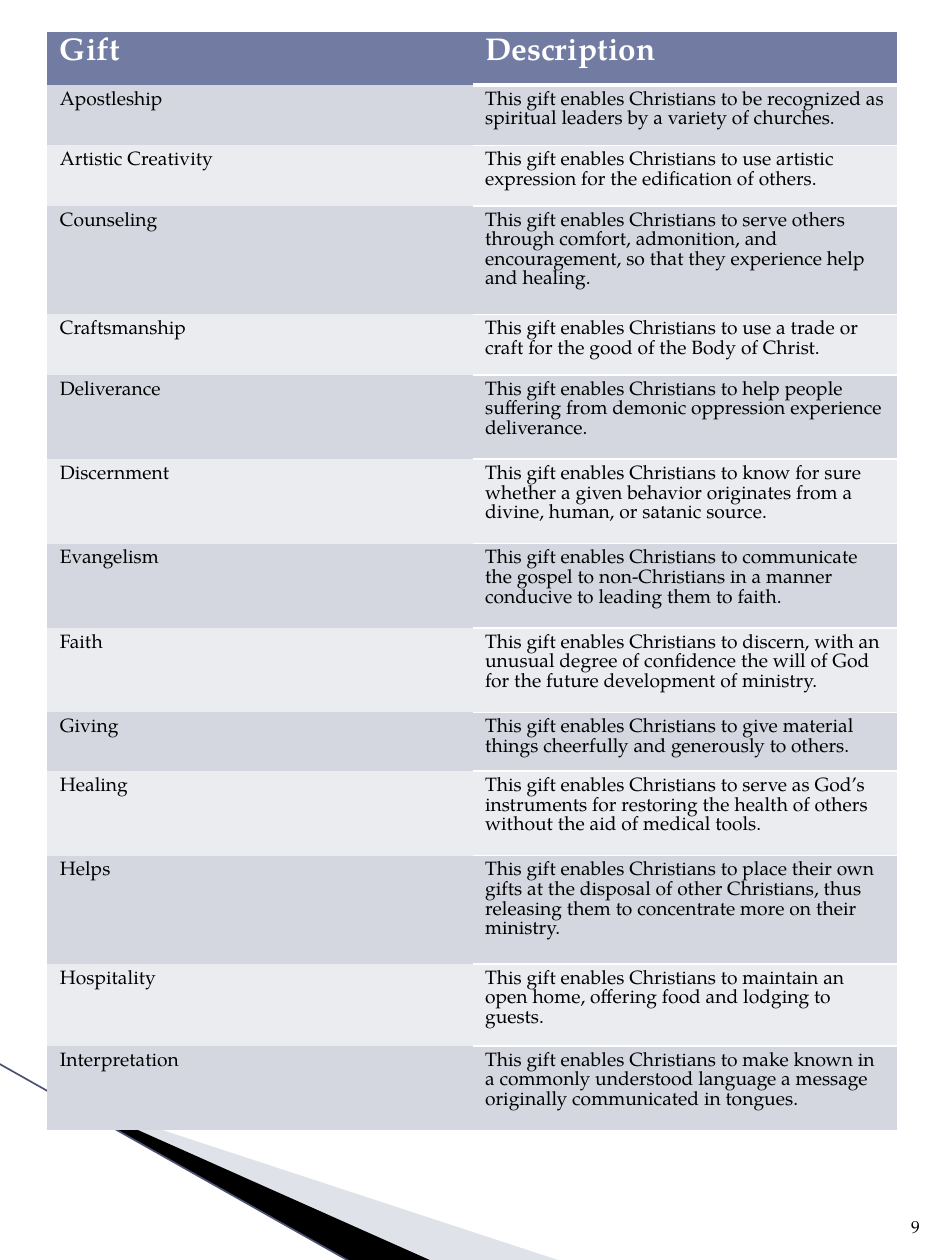
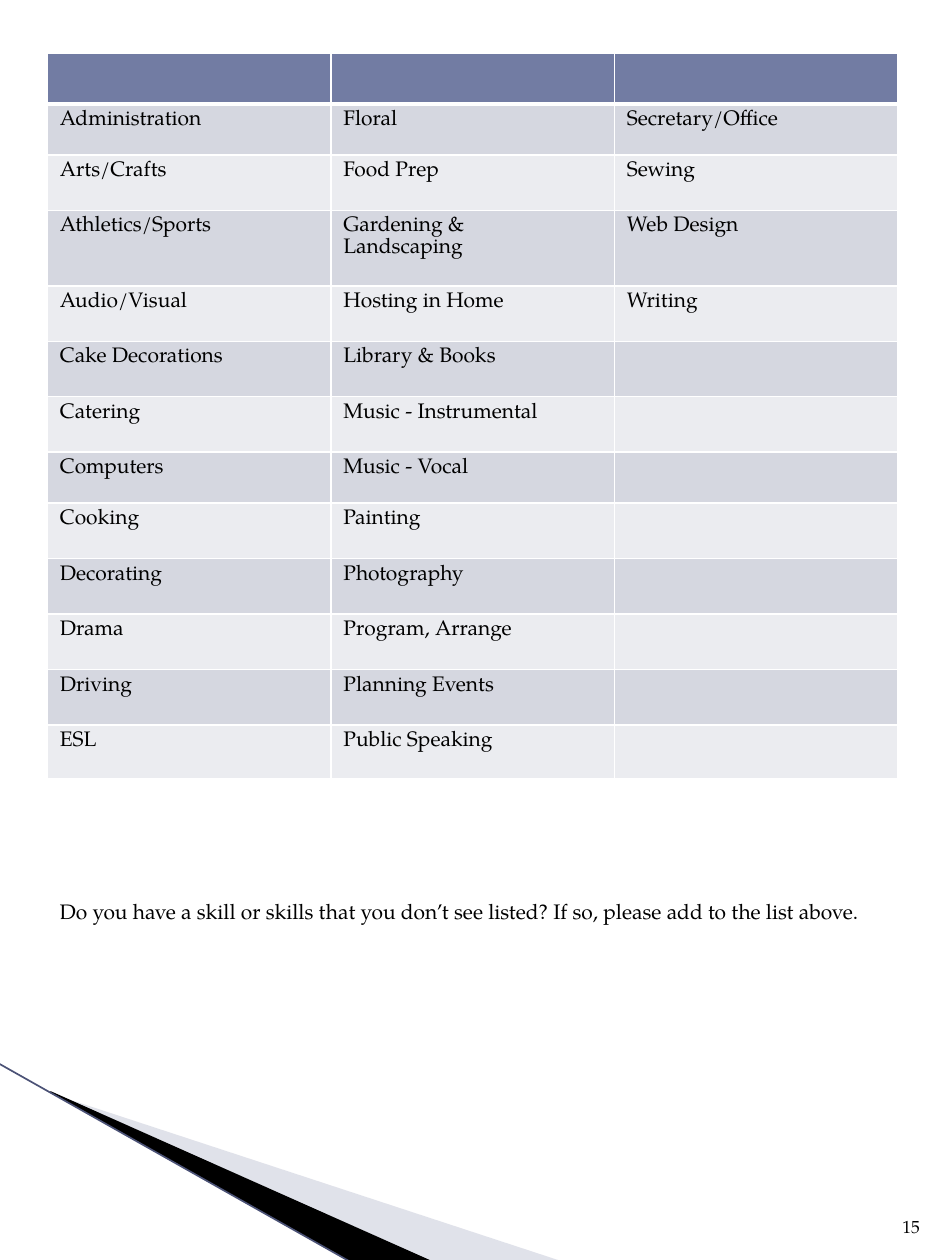
from lxml import etree
from pptx import Presentation
from pptx.dml.color import RGBColor
from pptx.enum.shapes import MSO_CONNECTOR
from pptx.enum.text import MSO_ANCHOR, PP_ALIGN
from pptx.oxml.ns import qn
from pptx.util import Inches, Pt

STRAIGHT = MSO_CONNECTOR.STRAIGHT
BOTTOM = MSO_ANCHOR.BOTTOM
LEFT, RIGHT = PP_ALIGN.LEFT, PP_ALIGN.RIGHT

WHITE = RGBColor(0xFF, 0xFF, 0xFF)
BLACK = RGBColor(0x00, 0x00, 0x00)
HEADER_BLUE = RGBColor(0x72, 0x7C, 0xA3)
BAND_DARK = RGBColor(0xD5, 0xD7, 0xE0)
BAND_LIGHT = RGBColor(0xEB, 0xEC, 0xF0)
WEDGE_BLUE = RGBColor(0xB3, 0xB7, 0xCB)
EDGE_BLUE = RGBColor(0x4B, 0x52, 0x76)

FONT_NAME = "TeX Gyre Pagella"
NO_TABLE_STYLE = "{2D5ABB26-0587-4C30-8999-92F81FD0307C}"
GRID_COLUMNS, GRID_ROWS = 20, 40

HEADER_FORMAT = {"size": Pt(18), "bold": True}
GIFT_FORMAT = {"size": Pt(11), "bold": False}
SKILL_FORMAT = {"size": Pt(12), "bold": False}
NUMBER_FORMAT = {"size": Pt(10)}

GIFT_HEADER = ("Gift", "Description")
GIFTS = [
    ("Apostleship", "be recognized as spiritual leaders by a variety of churches."),
    ("Artistic Creativity", "use artistic expression for the edification of others."),
    ("Counseling", "serve others through comfort, admonition, and encouragement, "
                   "so that they experience help and healing."),
    ("Craftsmanship", "use a trade or craft for the good of the Body of Christ."),
    ("Deliverance", "help people suffering from demonic oppression experience deliverance."),
    ("Discernment", "know for sure whether a given behavior originates from a divine, "
                    "human, or satanic source."),
    ("Evangelism", "communicate the gospel to non-Christians in a manner conducive to "
                   "leading them to faith."),
    ("Faith", "discern, with an unusual degree of confidence the will of God for the "
              "future development of ministry."),
    ("Giving", "give material things cheerfully and generously to others."),
    ("Healing", "serve as God’s instruments for restoring the health of others without "
                "the aid of medical tools."),
    ("Helps", "place their own gifts at the disposal of other Christians, thus releasing "
              "them to concentrate more on their ministry."),
    ("Hospitality", "maintain an open home, offering food and lodging to guests."),
    ("Interpretation", "make known in a commonly understood language a message originally "
                       "communicated in tongues."),
]
GIFT_HEIGHTS = [1.7, 1.92, 1.92, 3.44, 1.92, 2.68, 2.68, 2.68, 2.68,
                1.72, 2.68, 3.44, 2.28, 2.68]

SKILLS = [
    ("Administration", "Floral", "Secretary/Office"),
    ("Arts/Crafts", "Food Prep", "Sewing"),
    ("Athletics/Sports", "Gardening &\nLandscaping", "Web Design"),
    ("Audio/Visual", "Hosting in Home", "Writing"),
    ("Cake Decorations", "Library & Books", ""),
    ("Catering", "Music - Instrumental", ""),
    ("Computers", "Music - Vocal", ""),
    ("Cooking", "Painting", ""),
    ("Decorating", "Photography", ""),
    ("Drama", "Program, Arrange", ""),
    ("Driving", "Planning Events", ""),
    ("ESL", "Public Speaking", ""),
]
SKILL_HEIGHTS = [1.62, 1.62, 1.76, 2.4, 1.76, 1.76, 1.76, 1.62,
                 1.76, 1.76, 1.76, 1.76, 1.72]
SKILL_QUESTION = ("Do you have a skill or skills that you don’t see listed? "
                  "If so, please add to the list above.")


class Deck:
    def __init__(self):
        self.presentation = Presentation()
        self.presentation.slide_width = Inches(7.5)
        self.presentation.slide_height = Inches(10)
        self.slide = None

    def x(self, columns):
        return round(self.presentation.slide_width * columns / GRID_COLUMNS)

    def y(self, rows):
        return round(self.presentation.slide_height * rows / GRID_ROWS)

    def box(self, left, top, width, height):
        return self.x(left), self.y(top), self.x(width), self.y(height)

    def start_slide(self, number, number_width):
        self.slide = self.presentation.slides.add_slide(self.presentation.slide_layouts[6])
        self.wedge([(1.09, 34.72), (11.89, 40.04), (9.12, 40.04), (1.09, 34.68)],
                   WEDGE_BLUE, opacity=40)
        self.wedge([(1.07, 34.64), (9.15, 40.04), (7.44, 40.08), (1.07, 34.68)], BLACK)
        self.line((-0.03, 33.76), (7.44, 40.08), EDGE_BLUE, 0.95)
        self.text(number, (19.73 - number_width, 37.36, number_width, 2.12),
                  NUMBER_FORMAT, RIGHT)

    def wedge(self, points, color, opacity=100):
        corners = [(self.x(column), self.y(row)) for column, row in points]
        builder = self.slide.shapes.build_freeform(*corners[0])
        builder.add_line_segments(corners[1:], close=True)
        shape = builder.convert_to_shape()
        shape.shadow.inherit = False
        shape.fill.solid()
        shape.fill.fore_color.rgb = color
        shape.line.fill.background()
        if opacity < 100:
            fill_color = shape._element.spPr.find(qn("a:solidFill"))[0]
            etree.SubElement(fill_color, qn("a:alpha"), val=str(opacity * 1000))

    def line(self, start, end, color, width):
        connector = self.slide.shapes.add_connector(
            STRAIGHT, self.x(start[0]), self.y(start[1]), self.x(end[0]), self.y(end[1]))
        connector.line.color.rgb = color
        connector.line.width = Pt(width)
        etree.SubElement(connector._element.spPr, qn("a:effectLst"))

    def fill_text(self, frame, text, font_format, color=BLACK, alignment=LEFT):
        frame.text = text
        for paragraph in frame.paragraphs:
            paragraph.alignment = alignment
            for run in paragraph.runs:
                for name, value in {"name": FONT_NAME, **font_format}.items():
                    setattr(run.font, name, value)
                run.font.color.rgb = color

    def text(self, text, place, font_format, alignment=LEFT):
        frame = self.slide.shapes.add_textbox(*self.box(*place)).text_frame
        frame.word_wrap = True
        frame.vertical_anchor = BOTTOM
        self.fill_text(frame, text, font_format, alignment=alignment)

    def borders(self, cell, widths):
        properties = cell._tc.get_or_add_tcPr()
        for position, (side, width) in enumerate(widths.items()):
            border = etree.Element(qn(f"a:ln{side}"), w=str(int(Pt(width))))
            fill = etree.SubElement(border, qn("a:solidFill"))
            etree.SubElement(fill, qn("a:srgbClr"), val=str(WHITE))
            properties.insert(position, border)

    def table(self, rows, heights, top, body_format, sides, bordered_columns):
        column_count = len(rows[0])
        frame = self.slide.shapes.add_table(
            len(rows), column_count, *self.box(1, top, 18, sum(heights)))
        table = frame.table
        table.horz_banding = False
        table._tbl.tblPr.find(qn("a:tableStyleId")).text = NO_TABLE_STYLE
        for column in table.columns:
            column.width = self.x(18 / column_count)
        for row_index, (values, height) in enumerate(zip(rows, heights)):
            table.rows[row_index].height = self.y(height)
            is_header = row_index == 0
            band = HEADER_BLUE if is_header else (BAND_LIGHT, BAND_DARK)[row_index % 2]
            font_format = HEADER_FORMAT if is_header else body_format
            text_color = WHITE if is_header else BLACK
            thick_side = {0: "B", 1: "T"}.get(row_index)
            for column_index, value in enumerate(values):
                cell = table.cell(row_index, column_index)
                cell.fill.solid()
                cell.fill.fore_color.rgb = band
                self.fill_text(cell.text_frame, value, font_format, text_color)
                if column_index in bordered_columns:
                    self.borders(cell, {side: 3 if side == thick_side else 1 for side in sides})


def main():
    deck = Deck()

    deck.start_slide("9", 0.8)
    gift_rows = [(gift, f"This gift enables Christians to {purpose}") for gift, purpose in GIFTS]
    deck.table([GIFT_HEADER, *gift_rows], GIFT_HEIGHTS, 1, GIFT_FORMAT, "RTB", {1})

    deck.start_slide("15", 1.28)
    deck.table([("", "", ""), *SKILLS], SKILL_HEIGHTS, 1.68, SKILL_FORMAT, "LRTB", {0, 1, 2})
    deck.text(SKILL_QUESTION, (1, 28.32, 18, 1.2), SKILL_FORMAT)

    deck.presentation.save("out.pptx")


if __name__ == "__main__":
    main()
